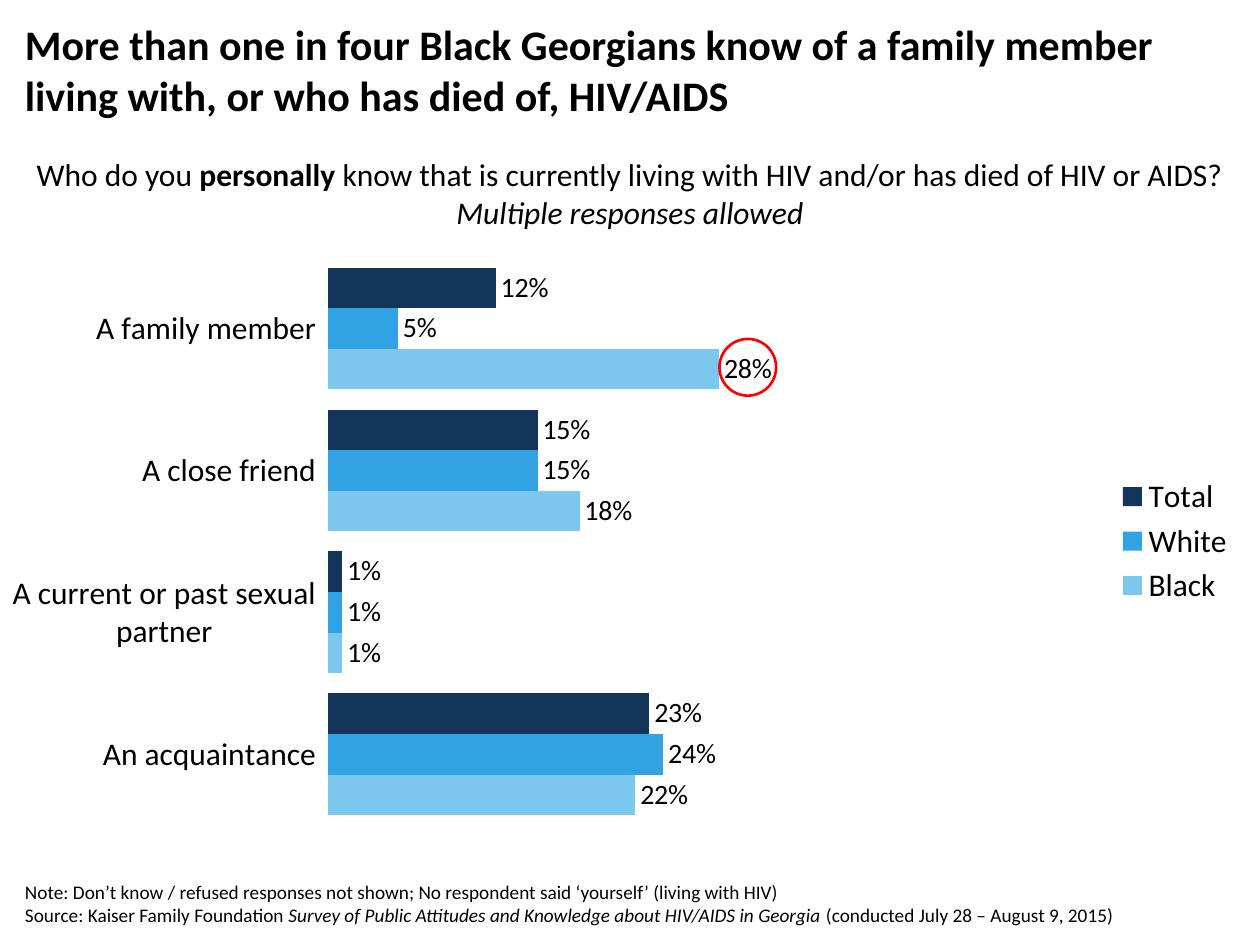
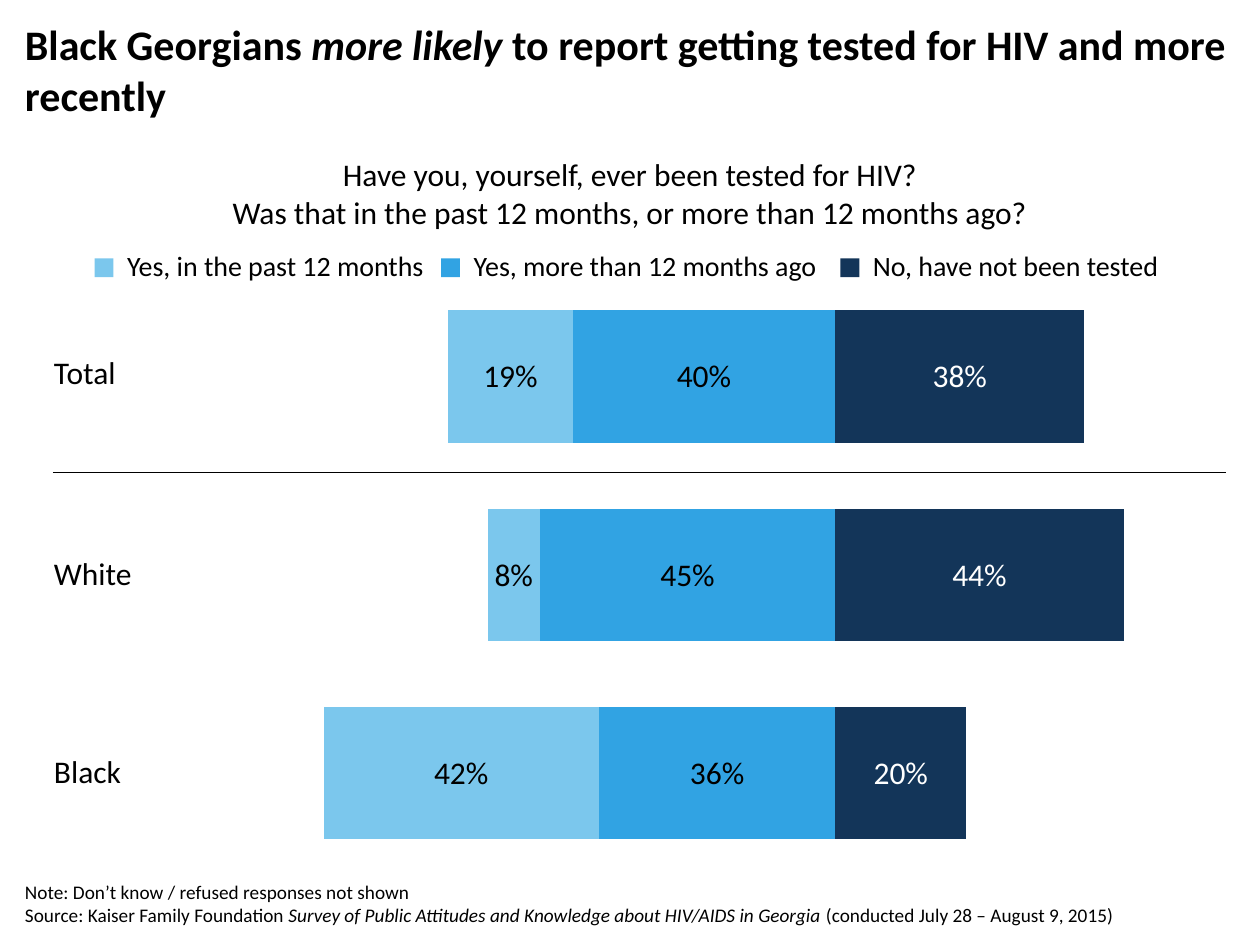
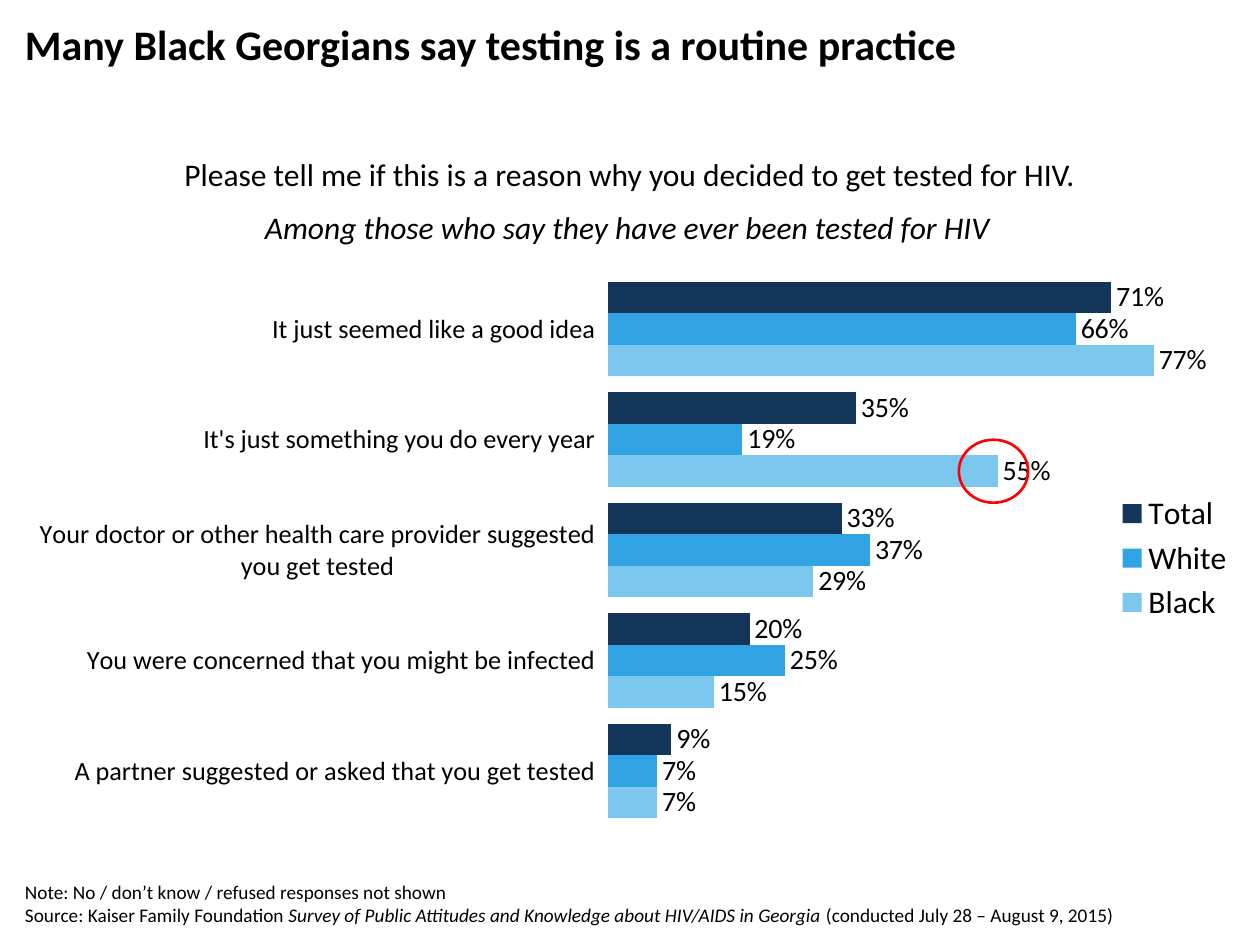
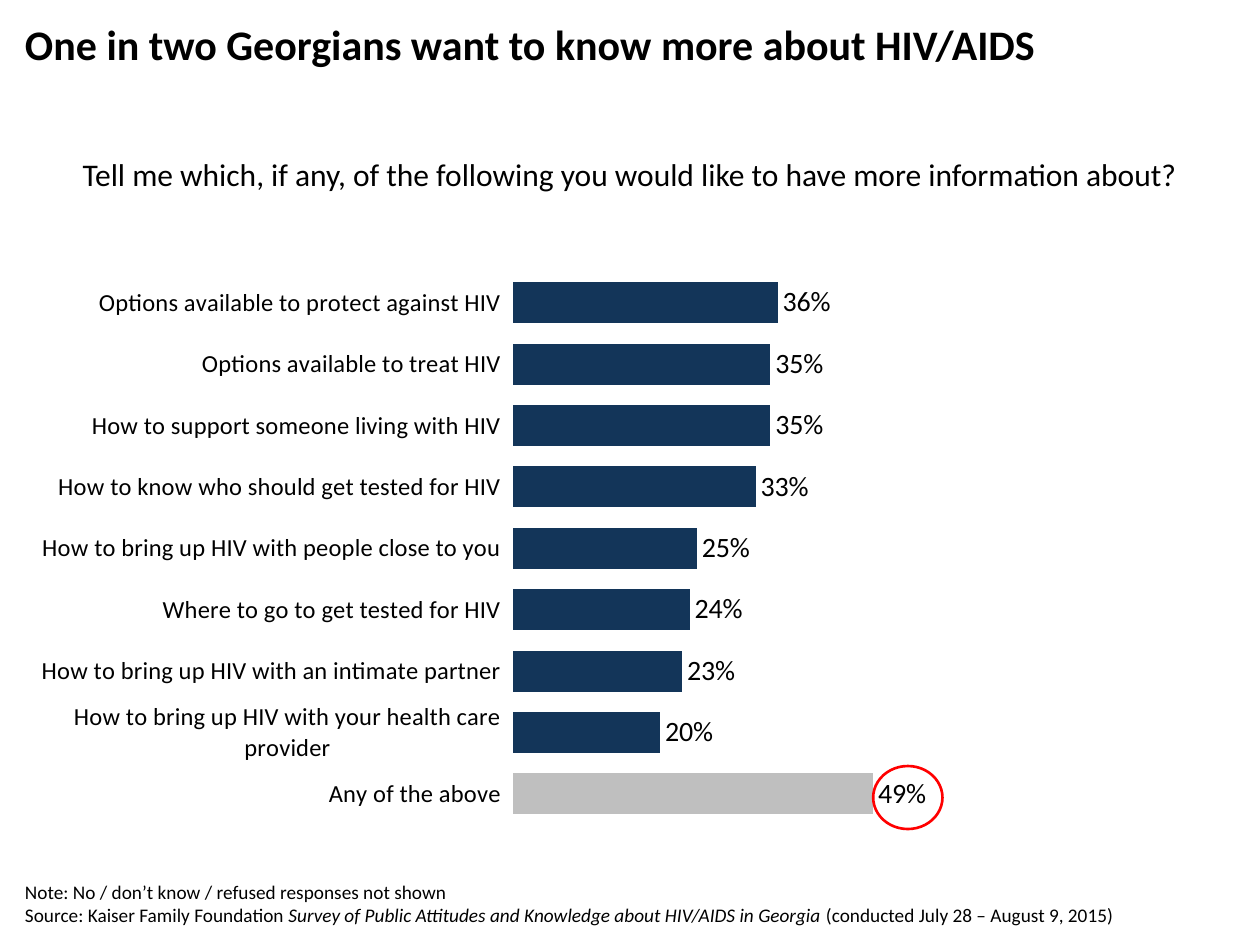
from pptx import Presentation
from pptx.chart.data import CategoryChartData
from pptx.dml.color import RGBColor
from pptx.enum.chart import (
    XL_CHART_TYPE, XL_LABEL_POSITION, XL_LEGEND_POSITION, XL_TICK_MARK)
from pptx.enum.shapes import MSO_CONNECTOR, MSO_SHAPE
from pptx.enum.text import MSO_ANCHOR, PP_ALIGN
from pptx.oxml import parse_xml
from pptx.oxml.ns import nsdecls
from pptx.util import Inches, Pt

CLUSTERED, STACKED = XL_CHART_TYPE.BAR_CLUSTERED, XL_CHART_TYPE.BAR_STACKED
OUTSIDE, CENTERED = XL_LABEL_POSITION.OUTSIDE_END, XL_LABEL_POSITION.CENTER
LEGEND_RIGHT, TICK_OUT = XL_LEGEND_POSITION.RIGHT, XL_TICK_MARK.OUTSIDE
STRAIGHT = MSO_CONNECTOR.STRAIGHT
ELLIPSE, SQUARE = MSO_SHAPE.OVAL, MSO_SHAPE.RECTANGLE
TOP, BOTTOM = MSO_ANCHOR.TOP, MSO_ANCHOR.BOTTOM
LEFT, CENTER = PP_ALIGN.LEFT, PP_ALIGN.CENTER

COLORS = {name: RGBColor.from_string(value) for name, value in {
    "text": "000000", "white": "FFFFFF", "navy": "133559", "blue": "31A3E3",
    "sky": "7BC7ED", "grey": "BFBFBF", "ring": "FF0000"}.items()}

FONT = "Calibri"
TITLE = {"name": FONT, "size": Pt(24), "bold": True}
BODY = {"name": FONT, "size": Pt(18)}
KEY = {"name": FONT, "size": Pt(16)}
FOOTER = {"name": FONT, "size": Pt(11)}
BOLD, ITALIC, PLAIN = {"bold": True}, {"italic": True}, {}

# The slide is a grid of 100 columns by 75 rows of square cells.
SLIDE_WIDTH, SLIDE_HEIGHT = Inches(10), Inches(7.5)
CELL = SLIDE_WIDTH // 100
TITLE_AREA = (1, 1, 98, 10)
FOOTER_AREA = (1, 68, 91, 6)
QUESTION_AREA = (1, 11.8, 98, 7.1)

SOURCE = [("Source: Kaiser Family Foundation ", PLAIN),
          ("Survey of Public Attitudes and Knowledge about HIV/AIDS in Georgia ", ITALIC),
          ("(conducted July 28 – August 9, 2015)", PLAIN)]

# Each series is (name, percentages, colour, label colour).
# "plot" is left, top, width and height as shares of the chart.
PAGES = [
    {
        "title": [("More than one in four Black Georgians know of a family member "
                   "living with, or who has died of, HIV/AIDS", PLAIN)],
        "questions": [(QUESTION_AREA, [
            [("Who do you ", PLAIN), ("personally ", BOLD),
             ("know that is currently living with HIV and/or has died of HIV or AIDS?", PLAIN)],
            [("Multiple responses allowed", ITALIC)]])],
        "note": "Note: Don’t know / refused responses not shown; "
                "No respondent said ‘yourself’ (living with HIV)",
        "type": CLUSTERED, "area": (1, 18.9, 98, 48.1), "plot": (0.254, 0.032, 0.34, 0.937),
        "scale": (0, 0.3), "category_size": 18, "legend": True,
        "categories": ["An acquaintance", "A current or past sexual partner",
                       "A close friend", "A family member"],
        "series": [("Black", [22, 1, 18, 28], "sky", "text"),
                   ("White", [24, 1, 15, 5], "blue", "text"),
                   ("Total", [23, 1, 15, 12], "navy", "text")],
        "ring": (57.1, 26.9, 4.5, 4.5),
    },
    {
        "title": [("Black Georgians ", PLAIN), ("more likely ", ITALIC),
                  ("to report getting tested for HIV and more recently", PLAIN)],
        "questions": [(QUESTION_AREA, [
            [("Have you, yourself, ever been tested for HIV?", PLAIN)],
            [("Was that in the past 12 months, or more than 12 months ago?", PLAIN)]])],
        "note": "Note: Don’t know / refused responses not shown",
        "type": STACKED, "area": (1, 15.8, 98, 55), "plot": (0.135, 0.113, 0.85, 0.859),
        "scale": (-1, 0.6),
        "categories": ["1", "2", "3"],
        "series": [("Series 1", [-36, -45, -40], "blue", "text"),
                   ("Series 2", [-42, -8, -19], "sky", "text"),
                   ("Series 3", [20, 44, 38], "navy", "white")],
    },
    {
        "title": [("Many Black Georgians say testing is a routine practice", PLAIN)],
        "questions": [
            ((1, 11.8, 98, 4), [[("Please tell me if this is a reason why you decided "
                                  "to get tested for HIV.", PLAIN)]]),
            ((0.8, 16, 98, 4), [[("Among those who say they have ever been tested for HIV",
                                  ITALIC)]])],
        "note": "Note: No / don’t know / refused responses not shown",
        "type": CLUSTERED, "area": (1, 21.6, 98, 45.4), "plot": (0.482, 0.003, 0.517, 0.966),
        "scale": (0, 0.9), "category_size": 15, "legend": True,
        "categories": ["A partner suggested or asked that you get tested",
                       "You were concerned that you might be infected",
                       "Your doctor or other health care provider suggested you get tested",
                       "It's just something you do every year",
                       "It just seemed like a good idea"],
        "series": [("Black", [7, 15, 29, 55, 77], "sky", "text"),
                   ("White", [7, 25, 37, 19, 66], "blue", "text"),
                   ("Total", [9, 20, 33, 35, 71], "navy", "text")],
        "ring": (76.1, 34.9, 5.5, 5),
    },
    {
        "title": [("One in two Georgians want to know more about HIV/AIDS", PLAIN)],
        "questions": [((1, 11.8, 98, 4), [[("Tell me which, if any, of the following you would "
                                            "like to have more information about?", PLAIN)]])],
        "note": "Note: No / don’t know / refused responses not shown",
        "type": CLUSTERED, "area": (1, 21.6, 82.3, 45.4), "plot": (0.483, 0, 0.425, 0.966),
        "scale": (0, 0.6), "category_size": 14,
        "categories": ["Any of the above",
                       "How to bring up HIV with your health care provider",
                       "How to bring up HIV with an intimate partner",
                       "Where to go to get tested for HIV",
                       "How to bring up HIV with people close to you",
                       "How to know who should get tested for HIV",
                       "How to support someone living with HIV",
                       "Options available to treat HIV",
                       "Options available to protect against HIV"],
        "series": [("Series 1", [49, 20, 23, 24, 25, 33, 35, 35, 36], "navy", "text")],
        "highlight": 0,
        "ring": (69.3, 60.8, 5.5, 5),
    },
]


def cells(*counts):
    """Turn counts of grid cells into lengths."""
    return [round(count * CELL) for count in counts]


def add_text(shapes, area, paragraphs, style, align=LEFT, anchor=TOP):
    """Add a text box; each paragraph is a list of (text, extra format) spans."""
    box = shapes.add_textbox(*cells(*area))
    frame = box.text_frame
    frame.word_wrap = True
    frame.vertical_anchor = anchor
    for number, spans in enumerate(paragraphs):
        para = frame.add_paragraph() if number else frame.paragraphs[0]
        para.alignment = align
        for text, extra in spans:
            span = para.add_run()
            span.text = text
            span.font.color.rgb = COLORS["text"]
            for attribute, value in {**style, **extra}.items():
                setattr(span.font, attribute, value)


deck = Presentation()
deck.slide_width, deck.slide_height = SLIDE_WIDTH, SLIDE_HEIGHT

for content in PAGES:
    page = deck.slides.add_slide(deck.slide_layouts[6])
    stacked = content["type"] == STACKED

    data = CategoryChartData(number_format="0%")
    data.categories = content["categories"]
    for name, percentages, _, _ in content["series"]:
        data.add_series(name, [percentage / 100 for percentage in percentages])
    chart = page.shapes.add_chart(content["type"], *cells(*content["area"]), data).chart
    chart.has_title = False
    chart.font.name, chart.font.size = FONT, Pt(18)
    chart.font.color.rgb = COLORS["text"]

    chart.has_legend = content.get("legend", False)
    if chart.has_legend:
        chart.legend.position = LEGEND_RIGHT
        chart.legend.include_in_layout = False

    value_axis, category_axis = chart.value_axis, chart.category_axis
    value_axis.minimum_scale, value_axis.maximum_scale = content["scale"]
    value_axis.has_major_gridlines = False
    value_axis.visible = False
    if stacked:
        category_axis.visible = False
    else:
        category_axis.major_tick_mark = TICK_OUT
        category_axis.format.line.fill.background()
        category_axis.tick_labels.font.size = Pt(content["category_size"])

    plot = chart.plots[0]
    plot.gap_width = 50
    plot.overlap = 100 if stacked else 0
    plot.vary_by_categories = False
    for series, (_, _, color, label_color) in zip(plot.series, content["series"]):
        series.invert_if_negative = False
        series.format.fill.solid()
        series.format.fill.fore_color.rgb = COLORS[color]
        labels = series.data_labels
        labels.show_value = True
        labels.number_format = "0%;0%"
        labels.number_format_is_linked = False
        labels.position = CENTERED if stacked else OUTSIDE
        labels.font.size = Pt(18 if stacked else 16)
        labels.font.color.rgb = COLORS[label_color]
    if "highlight" in content:
        bar_fill = plot.series[0].points[content["highlight"]].format.fill
        bar_fill.solid()
        bar_fill.fore_color.rgb = COLORS["grey"]

    plot_area = chart.element.xpath("c:chart/c:plotArea")[0]
    for old_layout in plot_area.xpath("c:layout"):
        plot_area.remove(old_layout)
    modes = "".join(f'<c:{side}Mode val="edge"/>' for side in "xy")
    shares = "".join(f'<c:{side} val="{share}"/>'
                     for side, share in zip("xywh", content["plot"]))
    plot_area.insert(0, parse_xml(
        f'<c:layout {nsdecls("c")}><c:manualLayout><c:layoutTarget val="inner"/>'
        f'{modes}{shares}</c:manualLayout></c:layout>'))

    add_text(page.shapes, FOOTER_AREA, [[(content["note"], PLAIN)], SOURCE],
             FOOTER, anchor=BOTTOM)
    add_text(page.shapes, TITLE_AREA, [content["title"]], TITLE)
    for area, paragraphs in content["questions"]:
        add_text(page.shapes, area, paragraphs, BODY, align=CENTER)

    if "ring" in content:
        ring = page.shapes.add_shape(ELLIPSE, *cells(*content["ring"]))
        ring.shadow.inherit = False
        ring.fill.background()
        ring.line.color.rgb = COLORS["ring"]
        ring.line.width = Pt(1.5)

# Row names, divider and colour key of the stacked bars
testing_page = deck.slides[1]
for group_name, top in (("Total", 27.5), ("White", 43.5), ("Black", 59.2)):
    add_text(testing_page.shapes, (3.3, top, 14.2, 4), [[(group_name, PLAIN)]], BODY)

divider = testing_page.shapes.add_connector(STRAIGHT, *cells(4.2, 37.5, 97.3, 37.5))
divider.line.color.rgb = COLORS["text"]
divider.line.width = Pt(1)
divider.element.spPr.append(parse_xml(f'<a:effectLst {nsdecls("a")}/>'))

key = testing_page.shapes.add_group_shape()
key_left = 7.5
for answer, color, width in (("Yes, in the past 12 months", "sky", 25.9),
                             ("Yes, more than 12 months ago", "blue", 30.1),
                             ("No, have not been tested", "navy", 25.1)):
    swatch = key.shapes.add_shape(SQUARE, *cells(key_left, 20.5, 1.5, 1.5))
    swatch.shadow.inherit = False
    swatch.fill.solid()
    swatch.fill.fore_color.rgb = COLORS[color]
    swatch.line.fill.background()
    add_text(key.shapes, (key_left + 1.6, 19.2, width, 3.7), [[(answer, PLAIN)]], KEY)
    key_left += 1.6 + width

deck.save("out.pptx")
